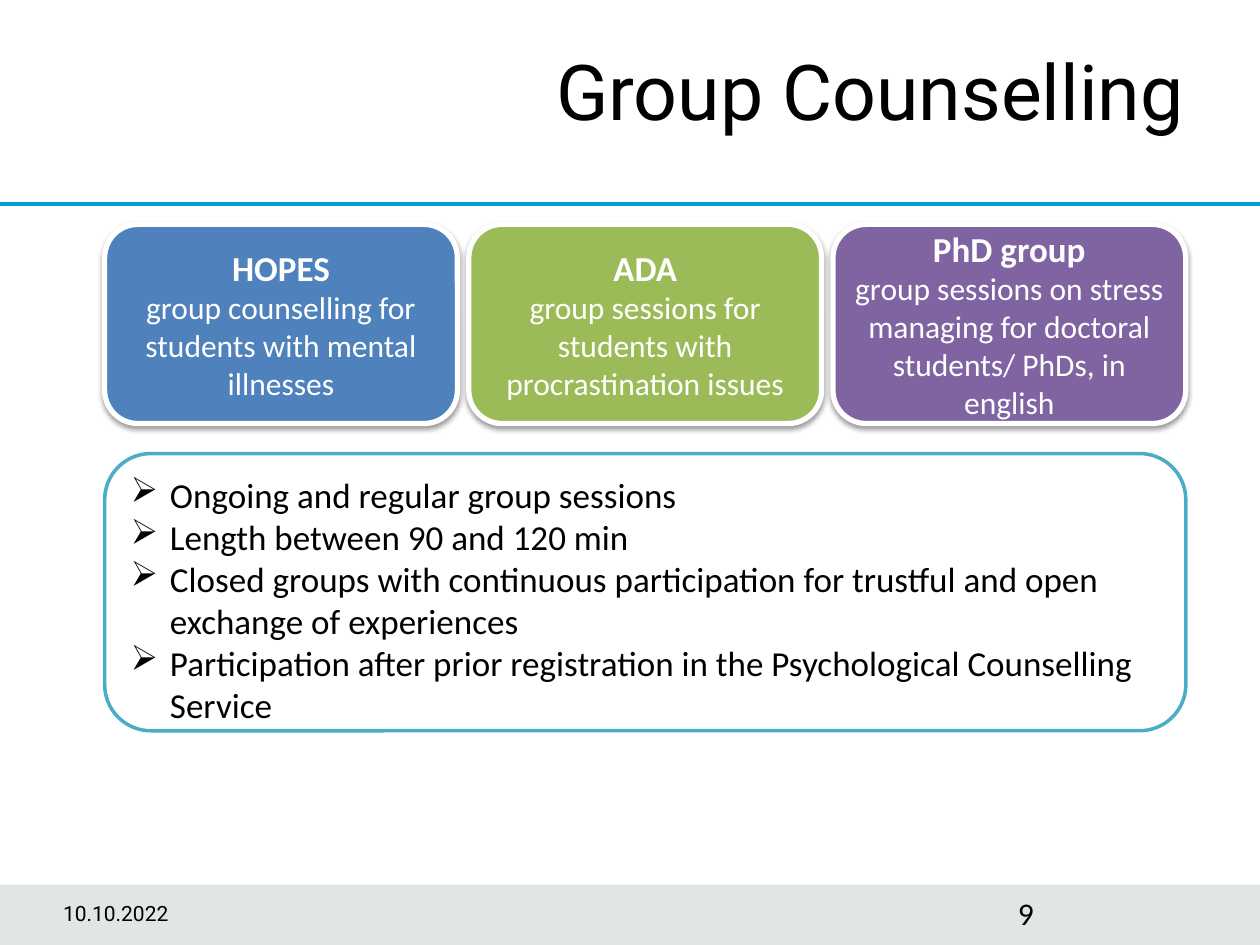
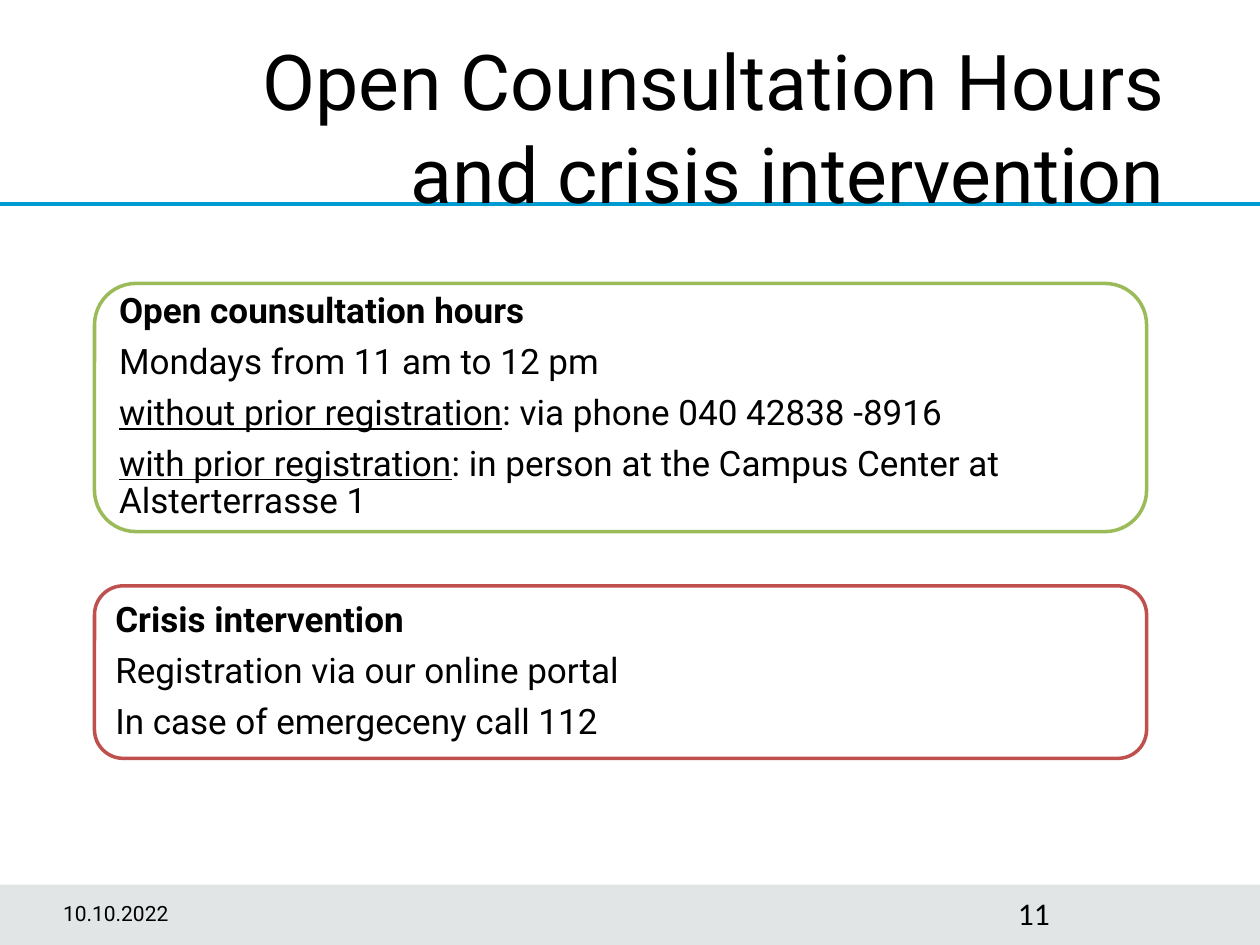
from lxml.etree import SubElement
from pptx import Presentation
from pptx.dml.color import RGBColor
from pptx.enum.shapes import MSO_CONNECTOR, MSO_SHAPE
from pptx.enum.text import MSO_ANCHOR, PP_ALIGN
from pptx.oxml.ns import qn
from pptx.util import Pt

SLIDE_WIDTH, SLIDE_HEIGHT = 720, 540
MARGIN = 36
HEADING_FONT, BODY_FONT = "Roboto", "Calibri"
BLACK = RGBColor(0x00, 0x00, 0x00)
WHITE = RGBColor(0xFF, 0xFF, 0xFF)
SLATE = RGBColor(0x3B, 0x51, 0x5B)
RULE_BLUE = RGBColor(0x00, 0x9C, 0xD1)
BLUE = RGBColor(0x4F, 0x81, 0xBD)
GREEN = RGBColor(0x9B, 0xBB, 0x59)
PURPLE = RGBColor(0x80, 0x64, 0xA2)
TEAL = RGBColor(0x4B, 0xAC, 0xC6)
RED = RGBColor(0xC0, 0x50, 0x4D)

DATE = "10.10.2022"
GROUPS = [
    ("HOPES", "group counselling for students with mental illnesses", BLUE),
    ("ADA", "group sessions for students with procrastination issues", GREEN),
    ("PhD group", "group sessions on stress managing for doctoral students/ "
     "PhDs, in english", PURPLE),
]
GROUP_FACTS = [
    "Ongoing and regular group sessions",
    "Length between 90 and 120 min",
    "Closed groups with continuous participation for trustful and open "
    "exchange of experiences",
    "Participation after prior registration in the Psychological Counselling "
    "Service",
]
OPEN_HOURS = [
    ("", "Mondays from 11 am to 12 pm"),
    ("without prior registration", ": via phone 040 42838\u00a0-8916"),
    ("with prior registration",
     ": in person at the Campus Center at Alsterterrasse 1"),
]
CRISIS_STEPS = [
    ("", "Registration via our online portal"),
    ("", "In case of emergeceny call 112"),
]


def style_paragraph(paragraph, size, font_name, color=BLACK, bold=False,
                    alignment=PP_ALIGN.LEFT):
    paragraph.alignment = alignment
    font = paragraph.font
    font.size = Pt(size)
    font.name = font_name
    font.bold = bold
    font.color.rgb = color


def next_paragraph(frame, is_first):
    return frame.paragraphs[0] if is_first else frame.add_paragraph()


def add_text(slide, box, text, size, font_name, alignment=PP_ALIGN.LEFT):
    shape = slide.shapes.add_textbox(*map(Pt, box))
    frame = shape.text_frame
    frame.word_wrap = True
    paragraph = frame.paragraphs[0]
    paragraph.text = text
    style_paragraph(paragraph, size, font_name, alignment=alignment)
    return frame


def add_panel(slide, box, fill, outline, width, anchor):
    shape = slide.shapes.add_shape(MSO_SHAPE.ROUNDED_RECTANGLE, *map(Pt, box))
    shape.shadow.inherit = False
    shape.fill.solid()
    shape.fill.fore_color.rgb = fill
    shape.line.color.rgb = outline
    shape.line.width = Pt(width)
    shape.text_frame.word_wrap = True
    shape.text_frame.vertical_anchor = anchor
    return shape


def add_soft_shadow(shape):
    effects = shape._element.spPr.find(qn("a:effectLst"))
    shadow = SubElement(effects, qn("a:outerShdw"), blurRad=str(Pt(3.1)),
                        dist=str(Pt(1.6)), dir="5400000", rotWithShape="0")
    color = SubElement(shadow, qn("a:srgbClr"), val=str(BLACK))
    SubElement(color, qn("a:alpha"), val="38000")


def add_footer(slide, box, number):
    left, top, width, height = box
    band = slide.shapes.add_shape(MSO_SHAPE.RECTANGLE, *map(Pt, box))
    band.shadow.inherit = False
    band.fill.solid()
    band.fill.fore_color.rgb = SLATE
    band.line.fill.background()
    color = band._element.spPr.find(qn("a:solidFill")).find(qn("a:srgbClr"))
    SubElement(color, qn("a:alpha"), val="15000")

    text_top = top + 2
    date = add_text(slide, (left + MARGIN, text_top, 71.3, 28.8), DATE, 12,
                    HEADING_FONT)
    date.margin_left = 0
    date.vertical_anchor = MSO_ANCHOR.MIDDLE
    add_text(slide, (left + width - MARGIN - 109.4, text_top, 109.4, 28.8),
             number, 18, BODY_FONT)


def add_frame(presentation, title, title_top, number):
    slide = presentation.slides.add_slide(presentation.slide_layouts[6])
    add_footer(slide, (0, 505.5, SLIDE_WIDTH, 34.5), number)
    rule = slide.shapes.add_connector(MSO_CONNECTOR.STRAIGHT, Pt(0), Pt(116.6),
                                      Pt(SLIDE_WIDTH), Pt(116.6))
    rule.line.color.rgb = RULE_BLUE
    rule.line.width = Pt(2)
    SubElement(rule._element.spPr, qn("a:effectLst"))
    add_text(slide, (MARGIN, title_top, SLIDE_WIDTH - 2 * MARGIN, 90), title,
             44, HEADING_FONT, PP_ALIGN.RIGHT)
    return slide


def add_group_cards(slide, box, gap=6.5):
    left, top, width, height = box
    card_width = (width - gap * (len(GROUPS) - 1)) / len(GROUPS)
    for index, (name, description, color) in enumerate(GROUPS):
        card_left = left + index * (card_width + gap)
        card = add_panel(slide, (card_left, top, card_width, height), color,
                         WHITE, 3, MSO_ANCHOR.MIDDLE)
        add_soft_shadow(card)
        frame = card.text_frame
        for text, size, bold in ((name, 20, True), (description, 18, False)):
            paragraph = next_paragraph(frame, bold)
            paragraph.text = text
            style_paragraph(paragraph, size, BODY_FONT, WHITE, bold,
                            PP_ALIGN.CENTER)


def add_fact_list(slide, box):
    panel = add_panel(slide, box, WHITE, TEAL, 2, MSO_ANCHOR.TOP)
    for index, fact in enumerate(GROUP_FACTS):
        paragraph = next_paragraph(panel.text_frame, index == 0)
        paragraph.text = fact
        properties = paragraph._p.get_or_add_pPr()
        properties.set("marL", str(Pt(22.5)))
        properties.set("indent", str(Pt(-22.5)))
        SubElement(properties, qn("a:buChar"), char="➢")
        style_paragraph(paragraph, 20, BODY_FONT)


def add_contact_panel(slide, box, outline, heading, entries):
    panel = add_panel(slide, box, WHITE, outline, 2, MSO_ANCHOR.MIDDLE)
    for index, (underlined, plain) in enumerate([("", heading), *entries]):
        paragraph = next_paragraph(panel.text_frame, index == 0)
        if underlined:
            run = paragraph.add_run()
            run.text = underlined
            run.font.underline = True
        paragraph.add_run().text = plain
        paragraph.line_spacing = 0.9
        paragraph.space_after = Pt(7.4)
        style_paragraph(paragraph, 20, HEADING_FONT, bold=index == 0)


def build_group_slide(presentation):
    slide = add_frame(presentation, "Group Counselling", 21.6, "9")
    left, width = 59.8, 617.8
    add_group_cards(slide, (left, 128.2, width, 113.8))
    add_fact_list(slide, (left, 259.2, width, 158.4))


def build_consultation_slide(presentation):
    title = "Open Counsultation Hours \nand crisis intervention "
    slide = add_frame(presentation, title, 15.8, "11")
    left, width = 54, 601.2
    add_contact_panel(slide, (left, 162, width, 141.8), GREEN,
                      "Open counsultation hours", OPEN_HOURS)
    add_contact_panel(slide, (left, 334.8, width, 98.6), RED,
                      "Crisis intervention", CRISIS_STEPS)


def main():
    presentation = Presentation()
    presentation.slide_width = Pt(SLIDE_WIDTH)
    presentation.slide_height = Pt(SLIDE_HEIGHT)
    build_group_slide(presentation)
    build_consultation_slide(presentation)
    presentation.save("out.pptx")


if __name__ == "__main__":
    main()
